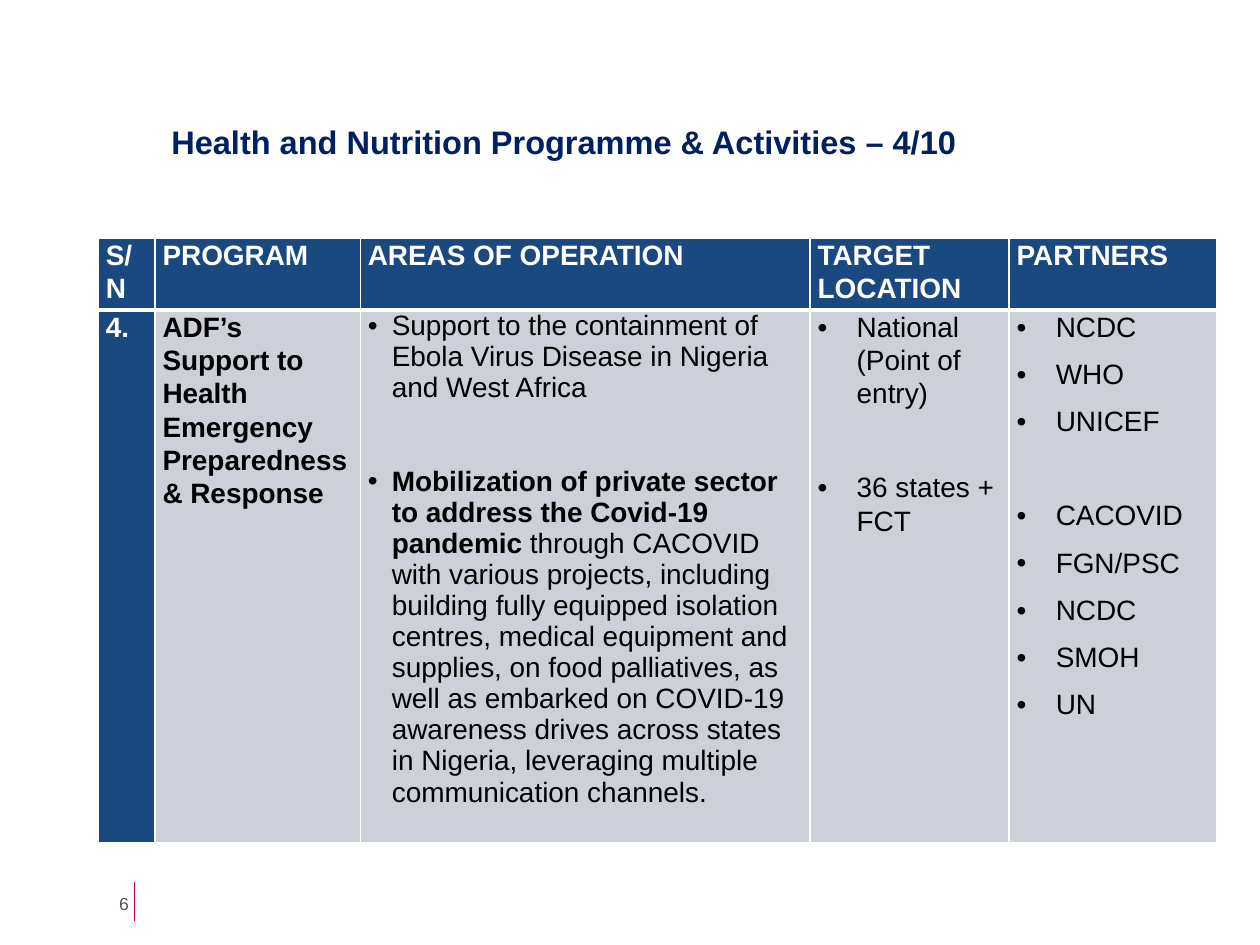
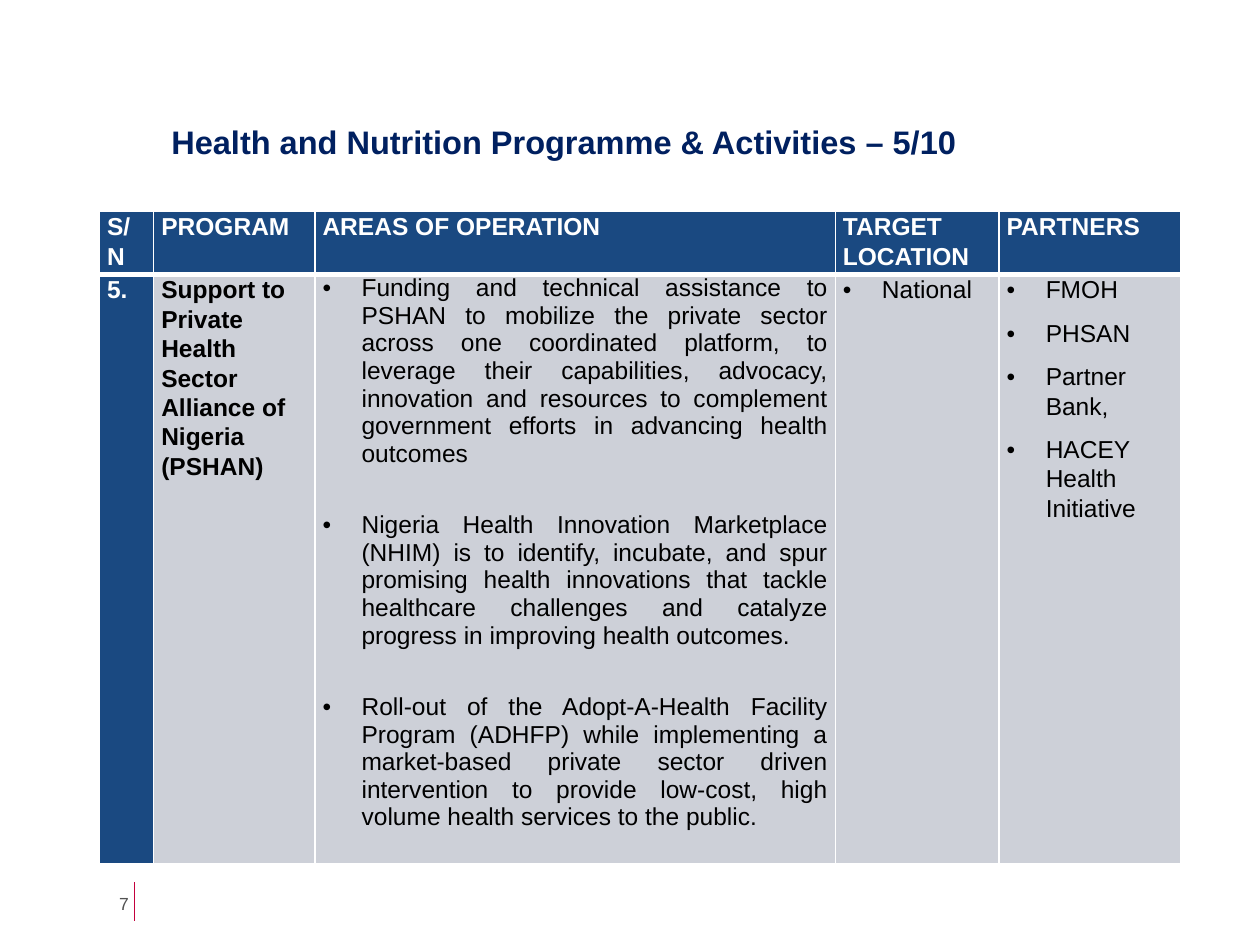
from lxml import etree
from pptx import Presentation
from pptx.dml.color import RGBColor
from pptx.enum.text import MSO_ANCHOR as Anchor, PP_ALIGN as Align
from pptx.enum.shapes import MSO_CONNECTOR as Connector
from pptx.oxml.ns import qn
from pptx.util import Inches, Pt

COLORS = {
    "title": "002060", "accent": "C3003C", "number": "525252",
    "header": "1A4981", "body": "CDD0D8", "white": "FFFFFF", "black": "000000",
}
FONT = "Arial"
HEADINGS = ["S/N", "PROGRAM", "AREAS OF OPERATION", "TARGET LOCATION", "PARTNERS"]
LINE_SPACING = 1.07
SPACE_AFTER = 8
GROUP_GAP = 34.7  # points between two groups of bullets


def color(name):
    return RGBColor.from_string(COLORS[name])


class ProgrammeDeck:
    def __init__(self):
        self.deck = Presentation()
        self.deck.slide_width = Inches(10)
        self.deck.slide_height = Inches(7.5)
        self.slide = None

    def add_slide(self, title, number):
        title_only = self.deck.slide_layouts[5]
        self.slide = self.deck.slides.add_slide(title_only)
        self.title(title)
        self.footer(number)

    def span(self, para, text, size, ink, bold=False):
        span = para.add_run()
        span.text = text
        span.font.name = FONT
        span.font.size = Pt(size)
        span.font.bold = bold
        span.font.color.rgb = color(ink)

    def title(self, text):
        box = self.slide.shapes.title
        box.left, box.top = Inches(1.26), Inches(0.95)
        box.width, box.height = Inches(8.11), Inches(0.83)
        box.text_frame.vertical_anchor = Anchor.TOP
        para = box.text_frame.paragraphs[0]
        para.alignment = Align.LEFT
        para.line_spacing = 0.9
        self.span(para, text, 18.6, "title", bold=True)

    def footer(self, number):
        """Draw the slide number and the thin rule to its right."""
        rule = self.slide.shapes.add_connector(
            Connector.STRAIGHT, Inches(1.07), Inches(7), Inches(1.07), Inches(7.31))
        rule.line.color.rgb = color("accent")
        rule.line.width = Pt(0.5)
        etree.SubElement(rule._element.spPr, qn("a:effectLst"))

        box = self.slide.shapes.add_textbox(
            Inches(0.5), Inches(6.97), Inches(0.62), Inches(0.4))
        frame = box.text_frame
        frame.word_wrap = True
        frame.vertical_anchor = Anchor.MIDDLE
        para = frame.paragraphs[0]
        para.alignment = Align.RIGHT
        self.span(para, str(number), 10, "number")

    def border(self, cell, side, points):
        properties = cell._tc.get_or_add_tcPr()
        line = etree.SubElement(properties, qn(f"a:ln{side}"), w=str(Pt(points)))
        fill = etree.SubElement(line, qn("a:solidFill"))
        etree.SubElement(fill, qn("a:srgbClr"), val=COLORS["white"])

    def cell(self, cell, fill, is_header):
        """Set the margins, white borders and fill of a cell."""
        cell.margin_left = cell.margin_right = Inches(0.06)
        cell.margin_top = cell.margin_bottom = 0
        for side in "LRTB":
            under_header = side == ("B" if is_header else "T")
            self.border(cell, side, 3 if under_header else 1)
        cell.fill.solid()
        cell.fill.fore_color.rgb = color(fill)

    def label(self, cell, text, size, ink):
        para = cell.text_frame.paragraphs[0]
        para.line_spacing = LINE_SPACING
        para.space_after = Pt(SPACE_AFTER)
        self.span(para, text, size, ink, bold=True)

    def bullets(self, cell, groups, size, indent=0.31, spacing=LINE_SPACING,
                after=SPACE_AFTER, gap=GROUP_GAP, align=Align.LEFT):
        """Fill a cell with groups of items; an item is a list of (text, bold)."""
        frame = cell.text_frame
        para = None
        for group in groups:
            for item in group:
                para = frame.add_paragraph() if para else frame.paragraphs[0]
                para.alignment = align
                para.line_spacing = spacing
                is_group_end = item is group[-1] and group is not groups[-1]
                para.space_after = Pt(gap if is_group_end else after)
                properties = para._p.get_or_add_pPr()
                properties.set("marL", str(Inches(indent)))
                properties.set("indent", str(-Inches(indent)))
                etree.SubElement(properties, qn("a:buFont"), typeface=FONT)
                etree.SubElement(properties, qn("a:buChar"), char="•")
                for text, bold in item:
                    self.span(para, text, size, "black", bold)

    def programme_table(self, left, top, widths, heights, size, number, program,
                        areas, locations, partners, area_style):
        frame = self.slide.shapes.add_table(
            2, len(HEADINGS), Inches(left), Inches(top),
            Inches(sum(widths)), Inches(sum(heights)))
        table = frame.table
        for column, width in zip(table.columns, widths):
            column.width = Inches(width)
        for row, height in zip(table.rows, heights):
            row.height = Inches(height)

        for index, heading in enumerate(HEADINGS):
            head, body = table.cell(0, index), table.cell(1, index)
            self.cell(head, "header", True)
            self.cell(body, "body" if index else "header", False)
            self.label(head, heading, size, "white")

        self.label(table.cell(1, 0), number, size, "white")
        self.label(table.cell(1, 1), program, size, "black")
        self.bullets(table.cell(1, 2), areas, size, spacing=1.0, **area_style)
        self.bullets(table.cell(1, 3), locations, size)
        self.bullets(table.cell(1, 4), partners, size)


def plain(*texts):
    """Return a group of bullet items in regular weight."""
    return [[(text, False)] for text in texts]


def main():
    show = ProgrammeDeck()

    show.add_slide("Health and Nutrition Programme & Activities – 4/10", 6)
    show.programme_table(
        0.78, 1.89, [0.45, 1.63, 3.57, 1.58, 1.65], [0.52, 3.95], 16,
        number="4.",
        program="ADF’s Support to Health Emergency Preparedness & Response",
        areas=[
            plain("Support to the containment of Ebola Virus Disease in Nigeria "
                  "and West Africa"),
            [[("Mobilization of private sector to address the Covid-19 pandemic ", True),
              ("through CACOVID with various projects, including building fully "
               "equipped isolation centres, medical equipment and supplies, on food "
               "palliatives, as well as embarked on COVID-19 awareness drives across "
               "states in Nigeria, leveraging multiple communication channels.", False)]],
        ],
        locations=[plain("National (Point of entry)"), plain("36 states + FCT")],
        partners=[plain("NCDC", "WHO", "UNICEF"),
                  plain("CACOVID", "FGN/PSC", "NCDC", "SMOH", "UN")],
        area_style={"indent": 0.19, "after": 0, "gap": 35.7})

    show.add_slide("Health and Nutrition Programme & Activities – 5/10", 7)
    show.programme_table(
        0.79, 1.68, [0.43, 1.28, 4.13, 1.3, 1.44], [0.46, 4.41], 14,
        number="5.",
        program="Support to Private Health Sector Alliance of Nigeria (PSHAN)",
        areas=[plain(
            "Funding and technical assistance to PSHAN to mobilize the private sector "
            "across one coordinated platform, to leverage their capabilities, advocacy, "
            "innovation and resources to complement government efforts in advancing "
            "health outcomes",
            "Nigeria Health Innovation Marketplace (NHIM) is to identify, incubate, and "
            "spur promising health innovations that tackle healthcare challenges and "
            "catalyze progress in improving health outcomes.",
            "Roll-out of the Adopt-A-Health Facility Program (ADHFP) while implementing "
            "a market-based private sector driven intervention to provide low-cost, "
            "high volume health services to the public.")],
        locations=[plain("National")],
        partners=[plain("FMOH", "PHSAN", "Partner Bank,", "HACEY Health Initiative")],
        area_style={"after": 25.3, "align": Align.JUSTIFY})

    show.deck.save("out.pptx")


if __name__ == "__main__":
    main()
